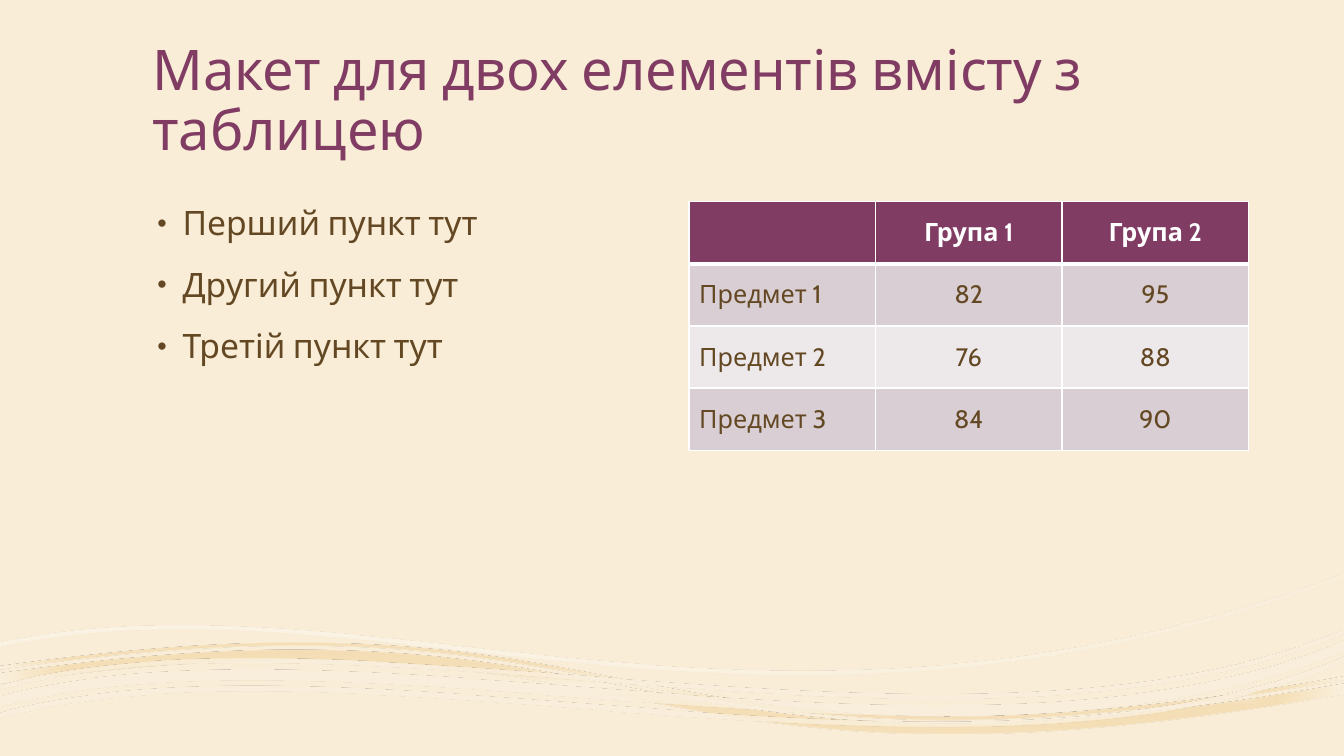
from math import cos, radians, sin

from lxml.etree import SubElement
from pptx import Presentation
from pptx.dml.color import RGBColor
from pptx.enum.text import MSO_ANCHOR, MSO_AUTO_SIZE, PP_ALIGN
from pptx.oxml import parse_xml
from pptx.oxml.ns import nsdecls, qn
from pptx.util import Inches, Pt

WIDTH, HEIGHT = Inches(13.333), Inches(7.5)
FONT = "Cabin"
WAVE_TILT = 3.5
COLORS = {
    "background": "F9EDD7", "plum": "803C63", "brown": "634823", "white": "FFFFFF",
    "row_dark": "D8CED3", "row_light": "EDE8EA",
    "cream": "FAF1DF", "sand": "F4DEB7", "gold": "F4DDB3", "pale": "FAEFDC",
}

TITLE = "Макет для двох елементів вмісту з таблицею"
BULLETS = ["Перший пункт тут", "Другий пункт тут", "Третій пункт тут"]
TABLE = [
    ["", "Група 1", "Група 2"],
    ["Предмет 1", "82", "95"],
    ["Предмет 2", "76", "88"],
    ["Предмет 3", "84", "90"],
]

# Wave edges are chains of cubic curves in inches, from left to right.
GOLD_TOP = [(0, 6.68), (1.24, 6.51), (2.22, 6.44), (3.06, 6.45),
            (6.7, 6.47), (7.38, 7.82), (13.33, 6.78)]
GOLD_BOTTOM = [(0, 6.78), (6.67, 5.83), (6.02, 8.16), (13.33, 6.88)]
WHITE_EDGE = [(0, 6.41), (3.73, 5.63), (7.54, 7.88), (13.33, 5.73)]
LINES_EDGE = [(0, 7.12), (3.49, 6.18), (9.55, 8.15), (13.33, 6.57)]

# Each wave: frame in inches, top edge, bottom edge, vertical shifts of its
# bands, gradient stops (position, colour, opacity) and gradient direction.
RADIAL = '<a:path path="{}"><a:fillToRect l="{}" t="{}" r="{}" b="{}"/></a:path>'
WAVES = [
    ((0.01, 6.12, 13.31, 1.35), GOLD_TOP, GOLD_BOTTOM, [(0, 0), (-0.07, -0.14)],
     [(0, "cream", 90), (18, "sand", 100), (37, "gold", 90), (100, "cream", 100)],
     RADIAL.format("shape", 50000, 50000, 50000, 50000)),
    ((0.03, 5.88, 13.35, 1.71), WHITE_EDGE, WHITE_EDGE, [(-0.04, 0)],
     [(36, "white", 30), (100, "background", 48)],
     '<a:lin ang="2700000" scaled="0"/>'),
    ((-0.01, 6.25, 13.36, 1.15), LINES_EDGE, LINES_EDGE,
     [(-0.05, 0), (-0.21, -0.11), (-0.32, -0.28)],
     [(36, "white", 47), (100, "pale", 82)],
     RADIAL.format("rect", 100000, 100000, 0, 0)),
]


def color(name):
    return RGBColor.from_string(COLORS[name])


def box(left, top, width, height):
    """Turn percentages of the slide into lengths."""
    return (int(WIDTH * left / 100), int(HEIGHT * top / 100),
            int(WIDTH * width / 100), int(HEIGHT * height / 100))


def place(shape, area):
    shape.left, shape.top, shape.width, shape.height = area


def format_runs(paragraph, size, color_name, bold=False):
    for run in paragraph.runs:
        run.font.name = FONT
        run.font.size = Pt(size)
        run.font.bold = bold
        run.font.color.rgb = color(color_name)


def local_points(edge, shift, frame):
    """Turn slide points into points of the frame before it is tilted."""
    left, top, width, height = frame
    turn = radians(WAVE_TILT)
    points = []
    for x, y in edge:
        across, down = x - left - width / 2, y + shift - top - height / 2
        points.append((Inches(across * cos(turn) - down * sin(turn) + width / 2),
                       Inches(across * sin(turn) + down * cos(turn) + height / 2)))
    return points


def add_step(outline, kind, points):
    step = SubElement(outline, qn(f"a:{kind}"))
    for x, y in points:
        SubElement(step, qn("a:pt"), x=str(x), y=str(y))


def add_curves(outline, points):
    for first in range(1, len(points), 3):
        add_step(outline, "cubicBezTo", points[first:first + 3])


def add_wave(slide, frame, top_edge, bottom_edge, shifts, stops, direction):
    left, top, width, height = map(Inches, frame)
    right, bottom = left + width, top + height
    builder = slide.shapes.build_freeform(left, top, scale=1.0)
    builder.add_line_segments([(right, top), (right, bottom), (left, bottom)])
    shape = builder.convert_to_shape()
    shape.rotation = -WAVE_TILT
    shape.shadow.inherit = False
    shape.line.fill.background()

    # Curved bands inside the frame
    geometry = shape._element.spPr.find(qn("a:custGeom"))
    outline = geometry.find(qn("a:pathLst"))[0]
    for step in list(outline):
        outline.remove(step)
    for top_shift, bottom_shift in shifts:
        upper = local_points(top_edge, top_shift, frame)
        lower = local_points(bottom_edge, bottom_shift, frame)[::-1]
        add_step(outline, "moveTo", upper[:1])
        add_curves(outline, upper)
        add_step(outline, "lnTo", lower[:1])
        add_curves(outline, lower)
        add_step(outline, "close", [])

    # Gradient with opacity
    stop_list = "".join(
        f'<a:gs pos="{position * 1000}"><a:srgbClr val="{COLORS[name]}">'
        f'<a:alpha val="{opacity * 1000}"/></a:srgbClr></a:gs>'
        for position, name, opacity in stops)
    geometry.addnext(parse_xml(
        f'<a:gradFill {nsdecls("a")} rotWithShape="1">'
        f'<a:gsLst>{stop_list}</a:gsLst>{direction}</a:gradFill>'))
    return shape


def add_waves(slide):
    tree = slide.shapes._spTree
    for position, wave in enumerate(WAVES, start=2):
        tree.insert(position, add_wave(slide, *wave)._element)


def fill_title(title):
    place(title, box(10.58, 4.44, 78.75, 17.78))
    frame = title.text_frame
    frame.text = TITLE
    frame.word_wrap = True
    frame.auto_size = MSO_AUTO_SIZE.NONE
    frame.vertical_anchor = MSO_ANCHOR.BOTTOM
    paragraph = frame.paragraphs[0]
    paragraph.alignment = PP_ALIGN.LEFT
    paragraph.line_spacing = 0.9
    format_runs(paragraph, 40, "plum")


def fill_list(body):
    place(body, box(10.58, 26.67, 38.1, 57.78))
    frame = body.text_frame
    frame.text = "\n".join(BULLETS)
    frame.word_wrap = True
    frame.auto_size = MSO_AUTO_SIZE.NONE
    for paragraph in frame.paragraphs:
        paragraph.line_spacing = 0.9
        paragraph.space_before = Pt(18)
        format_runs(paragraph, 24, "brown")
        properties = paragraph._p.get_or_add_pPr()
        properties.set("marL", str(Inches(0.3)))
        properties.set("indent", str(Inches(-0.25)))
        SubElement(properties, qn("a:buSzPct"), val="80000")
        SubElement(properties, qn("a:buFont"), typeface="Arial")
        SubElement(properties, qn("a:buChar"), char="•")


def add_border(cell, side, width):
    line = SubElement(cell._tc.get_or_add_tcPr(), qn(f"a:ln{side}"), w=str(Pt(width)))
    solid = SubElement(line, qn("a:solidFill"))
    SubElement(solid, qn("a:srgbClr"), val=COLORS["white"])


def format_cell(cell, row, column):
    header = row == 0
    thick = {"T": row == 1, "B": header}
    for side in "LRTB":
        add_border(cell, side, 3 if thick.get(side) else 1)
    cell.fill.solid()
    cell.fill.fore_color.rgb = color(
        "plum" if header else "row_dark" if row % 2 else "row_light")
    cell.vertical_anchor = MSO_ANCHOR.MIDDLE
    paragraph = cell.text_frame.paragraphs[0]
    paragraph.alignment = PP_ALIGN.CENTER if header or column else PP_ALIGN.LEFT
    format_runs(paragraph, 18, "white" if header else "brown", bold=header)


def add_score_table(slide):
    area = box(51.27, 26.67, 41.63, 32.9)
    table = slide.shapes.add_table(len(TABLE), len(TABLE[0]), *area).table
    for row, values in enumerate(TABLE):
        for column, value in enumerate(values):
            cell = table.cell(row, column)
            cell.text_frame.text = value
            format_cell(cell, row, column)


def main():
    presentation = Presentation()
    presentation.slide_width, presentation.slide_height = WIDTH, HEIGHT
    slide = presentation.slides.add_slide(presentation.slide_layouts[1])
    # Background
    slide.background.fill.solid()
    slide.background.fill.fore_color.rgb = color("background")
    add_waves(slide)
    # Content
    fill_title(slide.shapes.title)
    fill_list(slide.placeholders[1])
    add_score_table(slide)
    presentation.save("out.pptx")


if __name__ == "__main__":
    main()
